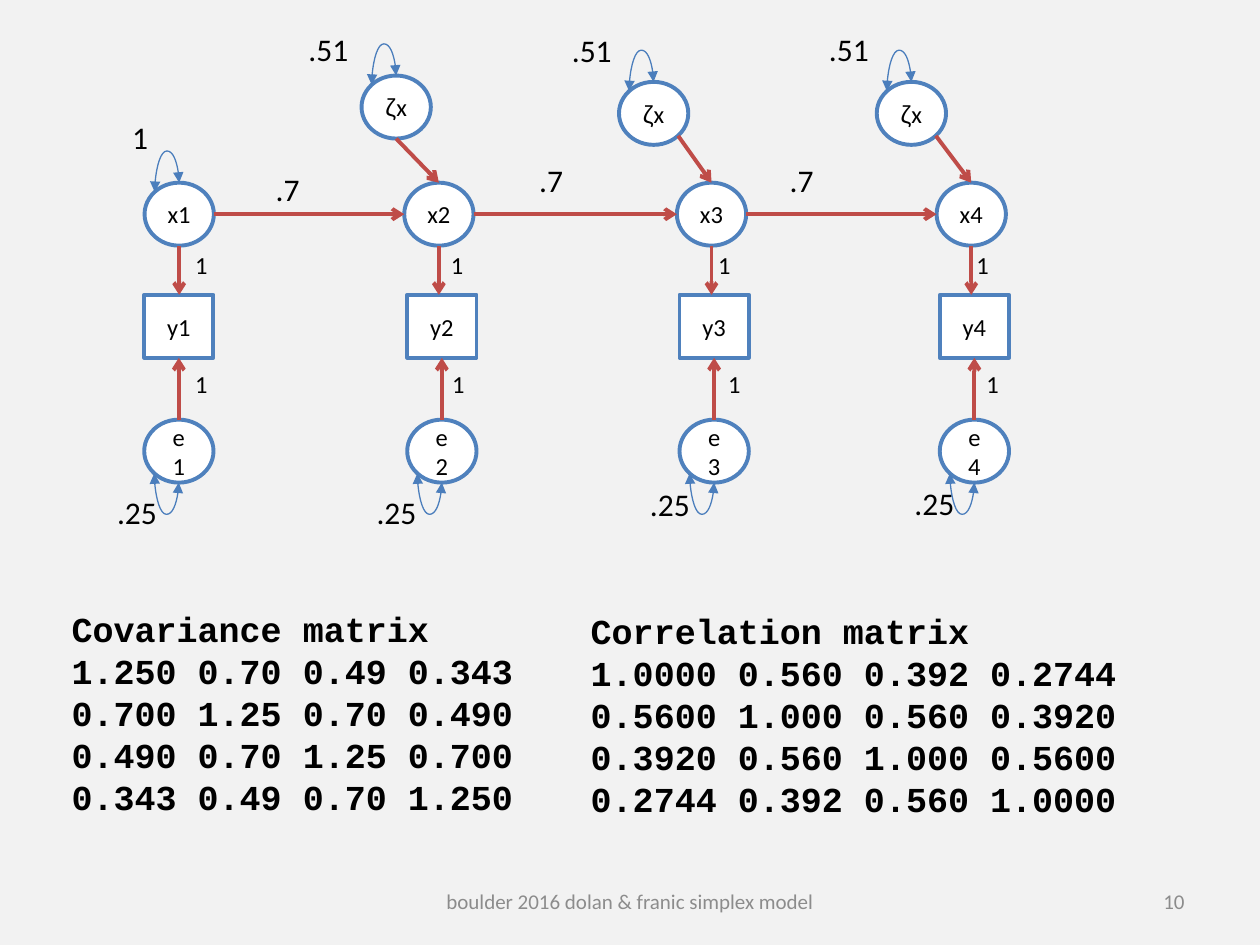
from dataclasses import dataclass

from pptx import Presentation
from pptx.dml.color import RGBColor
from pptx.enum.shapes import MSO_CONNECTOR, MSO_SHAPE
from pptx.enum.text import MSO_ANCHOR, PP_ALIGN
from pptx.oxml.ns import qn
from pptx.util import Pt
from lxml.etree import SubElement

COLORS = {
    "background": "F2F2F2", "node": "FFFFFF", "outline": "4F81BD",
    "path": "BF4C48", "variance": "4B7EBC", "text": "000000", "footer": "8C8C8C",
}
NODE_W, NODE_H = 39.6, 36
X_TOP, Y_TOP, E_TOP = 104.4, 168.5, 239.8
LOOP_W, LOOP_H = 14, 5.27  # distance between the two ends of a variance loop


@dataclass
class Occasion:
    """One measurement occasion; points are (left, top) from the diagram corner."""
    x_left: float
    y_left: float
    loading_left: float
    error_left: float
    error_variance: tuple
    zeta: tuple = None
    zeta_exit: tuple = None  # where the arrow leaves the zeta node
    zeta_variance: tuple = None
    regression: tuple = None


OCCASIONS = [
    Occasion(82.6, 82.4, 104.4, 104.4, (59.8, 278)),
    Occasion(231, 232.7, 250.6, 251.3, (208.1, 278), (206.6, 43.2),
             (NODE_W / 2, NODE_H), (169.2, 13.7), (150.5, 93.6)),
    Occasion(386.8, 388.3, 403.2, 409, (364.3, 273.6), (353.7, 46.8),
             (33.8, 30.8), (319.7, 14.4), (301, 88.6)),
    Occasion(535.2, 537, 550.8, 556.6, (515.5, 273), (501, 46.8),
             (33.8, 30.8), (466.6, 13.7), (444.2, 88.6)),
]

COVARIANCE = [
    "Covariance matrix",
    "1.250 0.70 0.49 0.343",
    "0.700 1.25 0.70 0.490",
    "0.490 0.70 1.25 0.700",
    "0.343 0.49 0.70 1.250",
]
CORRELATION = [
    "Correlation matrix",
    "1.0000 0.560 0.392 0.2744",
    "0.5600 1.000 0.560 0.3920",
    "0.3920 0.560 1.000 0.5600",
    "0.2744 0.392 0.560 1.0000",
]


def rgb(name):
    return RGBColor.from_string(COLORS[name])


def style_run(run, size, font="Calibri", color="text", bold=False):
    run.font.size = Pt(size)
    run.font.name = font
    run.font.bold = bold
    run.font.color.rgb = rgb(color)


def add_text(slide, left, top, width, height, lines, size, font="Calibri",
             color="text", bold=False, align=PP_ALIGN.LEFT,
             anchor=MSO_ANCHOR.TOP, wrap=True):
    box = slide.shapes.add_textbox(Pt(left), Pt(top), Pt(width), Pt(height))
    frame = box.text_frame
    frame.word_wrap = wrap
    frame.vertical_anchor = anchor
    frame.text = "\n".join(lines)
    for paragraph in frame.paragraphs:
        paragraph.alignment = align
        for run in paragraph.runs:
            style_run(run, size, font, color, bold)


def add_coefficient(slide, left, top, value, size=18):
    width = 10 + len(value) * 9.2
    add_text(slide, left, top, width, size * 1.6, [value], size, wrap=False)


def add_node(slide, preset, left, top, *labels):
    """Each label is a (text, font) pair and becomes one run."""
    node = slide.shapes.add_shape(preset, Pt(left), Pt(top), Pt(NODE_W), Pt(NODE_H))
    node.shadow.inherit = False
    node.fill.solid()
    node.fill.fore_color.rgb = rgb("node")
    node.line.color.rgb = rgb("outline")
    node.line.width = Pt(2.25)
    node.text_frame.vertical_anchor = MSO_ANCHOR.MIDDLE
    paragraph = node.text_frame.paragraphs[0]
    paragraph.alignment = PP_ALIGN.CENTER
    for text, font in labels:
        run = paragraph.add_run()
        run.text = text
        style_run(run, 14, font)


def add_line(slide, kind, start, end, color, width, **arrowheads):
    line = slide.shapes.add_connector(kind, *map(Pt, (*start, *end)))
    line.line.color.rgb = rgb(color)
    line.line.width = Pt(width)
    outline = line.line._get_or_add_ln()
    for tag, arrow in arrowheads.items():
        SubElement(outline, qn(f"a:{tag}"), type=arrow)
    SubElement(line._element.spPr, qn("a:effectLst"))
    return line


def add_path(slide, start, end):
    add_line(slide, MSO_CONNECTOR.STRAIGHT, start, end, "path", 2.25, tailEnd="arrow")


def add_variance_loop(slide, left, top, above):
    """Double-headed loop on the upper or lower left of the node at left, top."""
    center_x = left + NODE_W / 2 - LOOP_W / 2
    center_y = top + (LOOP_H / 2 if above else NODE_H - LOOP_H / 2)
    rise = LOOP_W / 2 if above else -LOOP_W / 2
    loop = add_line(slide, MSO_CONNECTOR.CURVE,
                    (center_x + LOOP_H / 2, center_y + rise),
                    (center_x - LOOP_H / 2, center_y - rise),
                    "variance", 0.75, headEnd="triangle", tailEnd="triangle")
    properties = loop._element.spPr
    properties.find(qn("a:xfrm")).set("rot", str(270 * 60000))
    geometry = properties.find(qn("a:prstGeom"))
    adjustments = geometry.find(qn("a:avLst"))
    if adjustments is None:
        adjustments = SubElement(geometry, qn("a:avLst"))
    bend = -343600 if above else 443600
    SubElement(adjustments, qn("a:gd"), name="adj1", fmla=f"val {bend}")


def draw_occasion(slide, left, top, number, occasion):
    x_left, y_left = left + occasion.x_left, left + occasion.y_left
    x_top, y_top, e_top = top + X_TOP, top + Y_TOP, top + E_TOP
    x_center, y_center = x_left + NODE_W / 2, y_left + NODE_W / 2
    for preset, name, node_left, node_top in (
            (MSO_SHAPE.OVAL, "x", x_left, x_top),
            (MSO_SHAPE.RECTANGLE, "y", y_left, y_top),
            (MSO_SHAPE.OVAL, "e", y_left, e_top)):
        add_node(slide, preset, node_left, node_top, (f"{name}{number}", "Calibri"))
    add_path(slide, (x_center, x_top + NODE_H), (x_center, y_top))
    add_path(slide, (y_center, e_top), (y_center, y_top + NODE_H))
    add_coefficient(slide, left + occasion.loading_left, top + 139.3, "1", 14)
    add_coefficient(slide, left + occasion.error_left, top + 207.2, "1", 14)
    variance_left, variance_top = occasion.error_variance
    add_coefficient(slide, left + variance_left, top + variance_top, ".25")
    add_variance_loop(slide, y_left, e_top, above=False)
    if occasion.zeta:
        draw_innovation(slide, left, top, occasion, (x_center, x_top))
    else:
        add_coefficient(slide, left + 68.4, top + 64.1, "1")
        add_variance_loop(slide, x_left, x_top, above=True)


def draw_innovation(slide, left, top, occasion, target):
    zeta_left, zeta_top = left + occasion.zeta[0], top + occasion.zeta[1]
    exit_x, exit_y = occasion.zeta_exit
    add_node(slide, MSO_SHAPE.OVAL, zeta_left, zeta_top, ("ζ", "Arial"), ("x", "Calibri"))
    add_path(slide, (zeta_left + exit_x, zeta_top + exit_y), target)
    add_variance_loop(slide, zeta_left, zeta_top, above=True)
    for (x, y), value in ((occasion.zeta_variance, ".51"), (occasion.regression, ".7")):
        add_coefficient(slide, left + x, top + y, value)


def draw_simplex(slide, left, top):
    for number, occasion in enumerate(OCCASIONS, start=1):
        draw_occasion(slide, left, top, number, occasion)
    middle = top + X_TOP + NODE_H / 2
    for earlier, later in zip(OCCASIONS, OCCASIONS[1:]):
        add_path(slide, (left + earlier.x_left + NODE_W, middle),
                 (left + later.x_left, middle))


def draw_matrix(slide, left, top, width, lines):
    add_text(slide, left, top, width, 128.2, lines, 20, "Courier New", bold=True)


def draw_footer(slide, left, top, height):
    for offset, width, text, align in (
            (0, 228, "boulder 2016 dolan & franic simplex model", PP_ALIGN.CENTER),
            (270, 168, "10", PP_ALIGN.RIGHT)):
        add_text(slide, left + offset, top, width, height, [text], 12,
                 color="footer", align=align, anchor=MSO_ANCHOR.MIDDLE)


def main():
    deck = Presentation()
    deck.slide_width, deck.slide_height = Pt(720), Pt(540)
    slide = deck.slides.add_slide(deck.slide_layouts[6])
    slide.background.fill.solid()
    slide.background.fill.fore_color.rgb = rgb("background")
    draw_simplex(slide, 0, 0)
    draw_matrix(slide, 33.8, 343.4, 296.6, COVARIANCE)
    draw_matrix(slide, 330.5, 344.9, 364.3, CORRELATION)
    draw_footer(slide, 246, 500.5, 28.75)
    deck.save("out.pptx")


if __name__ == "__main__":
    main()
